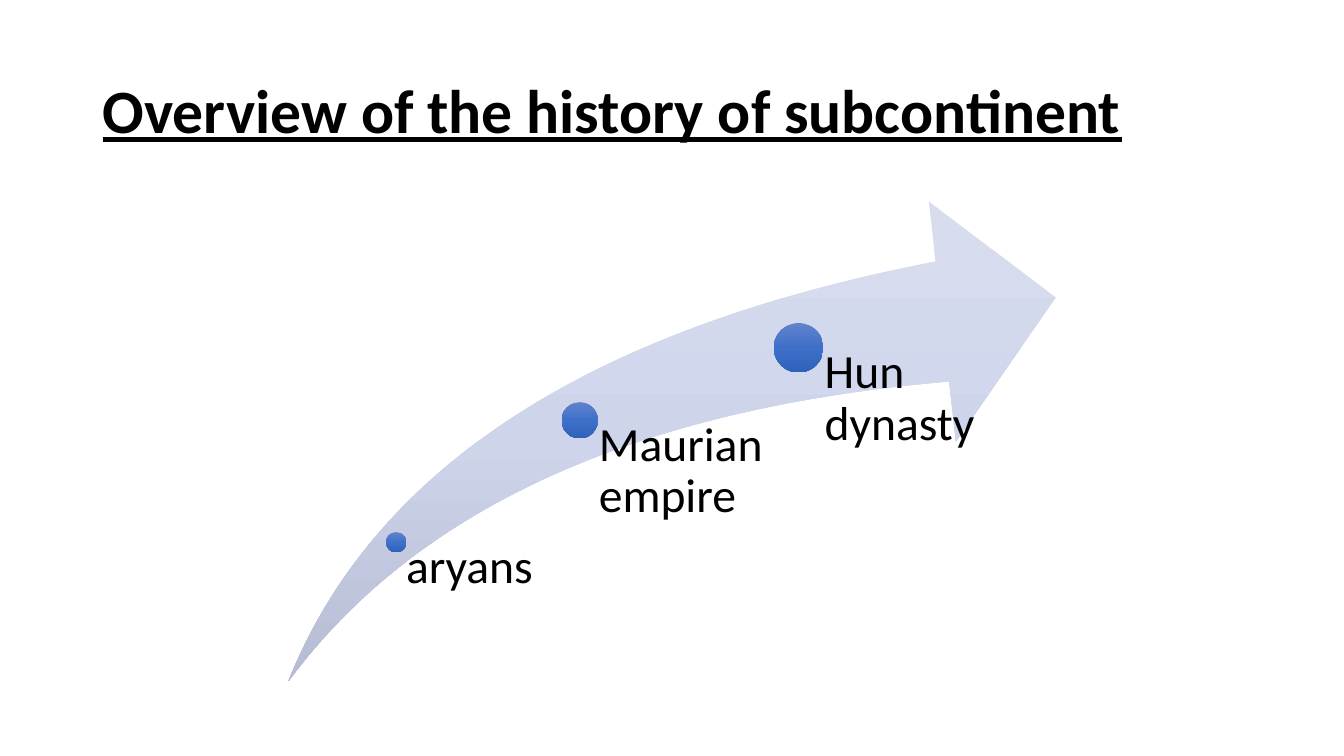
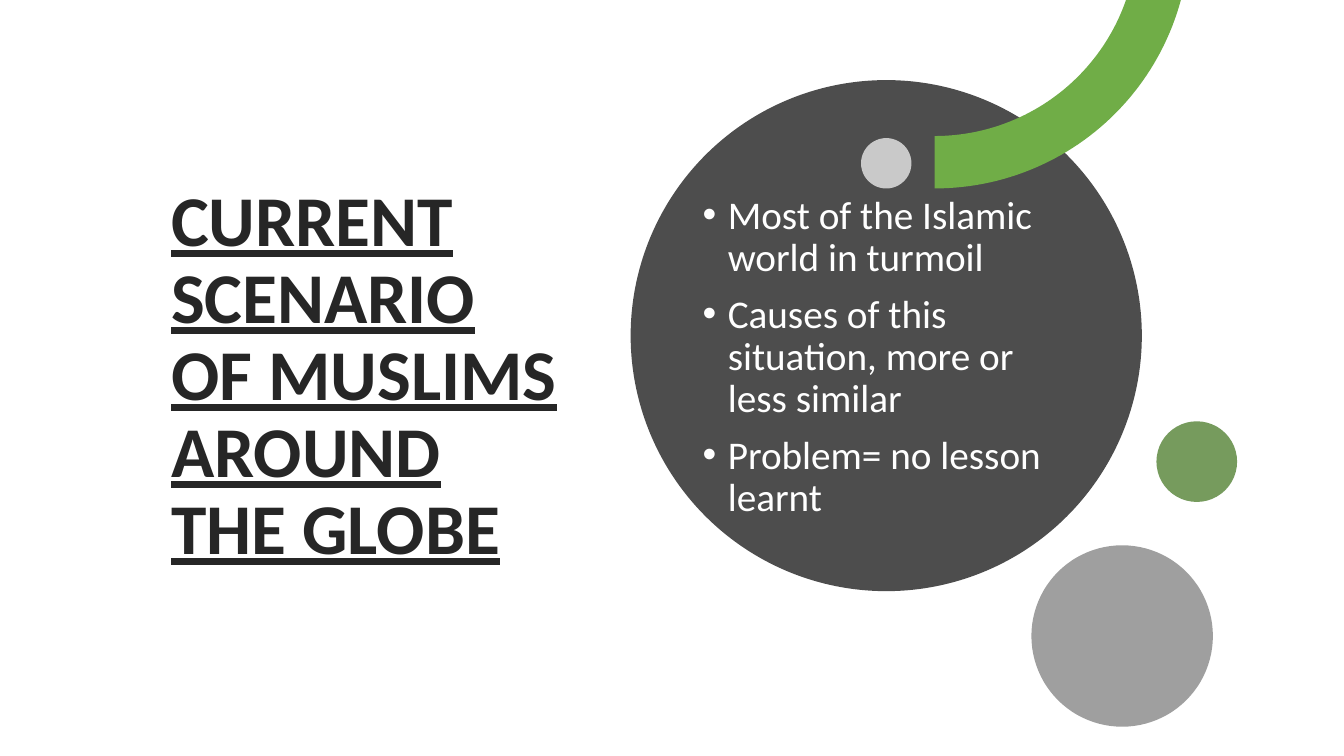
from math import asin, cos, pi, sin

from lxml.etree import SubElement
from pptx import Presentation
from pptx.dml.color import RGBColor
from pptx.enum.shapes import MSO_SHAPE
from pptx.enum.text import MSO_ANCHOR, PP_ALIGN
from pptx.oxml.ns import qn
from pptx.util import Inches, Pt

FONT = "Calibri"
COLORS = {
    "black": "000000",
    "title": "262626",
    "white": "FFFFFF",
    "disc": "4D4D4D",
    "gray": "404040",
    "green": "70AD47",
    "dark green": "548235",
}
SWOOSH_GRADIENT = ("D8DDEE", "CED5EB", "B5BCD3")
DOT_GRADIENT = ("6183CB", "3E70CA", "3062BB")


def add_plain_shape(slide, kind, left, top, width, height):
    shape = slide.shapes.add_shape(
        kind, Inches(left), Inches(top), Inches(width), Inches(height))
    shape.shadow.inherit = False
    shape.line.fill.background()
    return shape


def fill_solid(shape, color, opacity=100):
    shape.fill.solid()
    shape.fill.fore_color.rgb = RGBColor.from_string(COLORS[color])
    if opacity < 100:
        color_element = shape.element.spPr.find(qn("a:solidFill"))[0]
        SubElement(color_element, qn("a:alpha"), val=str(opacity * 1000))


def fill_gradient(shape, colors):
    """Fill from top to bottom with evenly spaced colours."""
    shape.fill.gradient()
    shape.fill.gradient_angle = 270
    stops = shape.element.spPr.find(qn("a:gradFill")).find(qn("a:gsLst"))
    for stop in list(stops):
        stops.remove(stop)
    for index, color in enumerate(colors):
        position = 100000 * index // (len(colors) - 1)
        stop = SubElement(stops, qn("a:gs"), pos=str(position))
        SubElement(stop, qn("a:srgbClr"), val=color)


def add_circle(slide, center_x, center_y, diameter):
    return add_plain_shape(slide, MSO_SHAPE.OVAL, center_x - diameter / 2,
                           center_y - diameter / 2, diameter, diameter)


def add_text(slide, box, lines, size, color, anchor=MSO_ANCHOR.MIDDLE, emphasis=False):
    """Add a text box; emphasis makes the text bold and underlined."""
    text_box = slide.shapes.add_textbox(*map(Inches, box))
    text_frame = text_box.text_frame
    text_frame.word_wrap = True
    text_frame.vertical_anchor = anchor
    text_frame.text = "\n".join(lines)
    for paragraph in text_frame.paragraphs:
        paragraph.alignment = PP_ALIGN.LEFT
        paragraph.line_spacing = 0.9
        font = paragraph.runs[0].font
        font.name = FONT
        font.size = Pt(size)
        font.color.rgb = RGBColor.from_string(COLORS[color])
        if emphasis:
            font.bold = True
            font.underline = True
    return text_frame


def add_title(slide, box, text, size, color):
    add_text(slide, box, [text], size, color, emphasis=True)


def add_milestone(slide, center_x, center_y, diameter, label, width, inset):
    """Add a dot with its label hanging from the dot's centre."""
    fill_gradient(add_circle(slide, center_x, center_y, diameter), DOT_GRADIENT)
    box = (center_x, center_y, width, 6.76 - center_y)
    text_frame = add_text(slide, box, [label], 34, "black", MSO_ANCHOR.TOP)
    text_frame.margin_left = Inches(inset)
    text_frame.margin_top = text_frame.margin_right = text_frame.margin_bottom = 0


def add_bullets(slide, box, lines, size, color):
    text_frame = add_text(slide, box, lines, size, color)
    for paragraph in text_frame.paragraphs:
        paragraph.space_before = Pt(10)
        properties = paragraph._p.get_or_add_pPr()
        properties.set("marL", str(Inches(0.25)))
        properties.set("indent", str(Inches(-0.25)))
        SubElement(properties, qn("a:buFont"), typeface="Arial")
        SubElement(properties, qn("a:buChar"), char="•")


def arc_points(center_x, center_y, radius, steps=48):
    """Points from the top edge of the slide to the bottom of a circle."""
    start = asin(-center_y / radius)
    angles = [start + (pi / 2 - start) * step / steps for step in range(steps + 1)]
    return [(Inches(center_x + radius * cos(angle)),
             Inches(center_y + radius * sin(angle))) for angle in angles]


def add_ring_segment(slide, center_x, center_y, outer_radius, inner_radius, color):
    points = arc_points(center_x, center_y, outer_radius)
    points += reversed(arc_points(center_x, center_y, inner_radius))
    builder = slide.shapes.build_freeform(*points[0])
    builder.add_line_segments(points[1:], close=True)
    segment = builder.convert_to_shape()
    segment.shadow.inherit = False
    segment.line.fill.background()
    fill_solid(segment, color)


def build_history_slide(slide):
    add_title(slide, (0.92, 0.4, 11.5, 1.45),
              "Overview of the history of subcontinent", 44, "black")
    swoosh = add_plain_shape(slide, MSO_SHAPE.SWOOSH_ARROW, 2.86, 2, 7.61, 4.76)
    swoosh.adjustments[0] = 0.25
    swoosh.adjustments[1] = 0.25
    fill_gradient(swoosh, SWOOSH_GRADIENT)
    for milestone in (
        (3.93, 5.38, 0.2, "aryans", 1.77, 0.1),
        (5.75, 4.17, 0.36, "Maurian empire", 1.83, 0.19),
        (7.92, 3.45, 0.49, "Hun dynasty", 1.83, 0.26),
    ):
        add_milestone(slide, *milestone)


def build_scenario_slide(slide):
    add_title(slide, (1.6, 1.19, 4.16, 5.11),
              "CURRENT SCENARIO OF MUSLIMS AROUND THE GLOBE", 51, "title")
    fill_solid(add_circle(slide, 8.79, 3.33, 5.07), "disc")
    fill_solid(add_circle(slide, 8.79, 1.62, 0.5), "white", 70)
    add_ring_segment(slide, 9.27, -0.66, 2.53, 2.01, "green")
    fill_solid(add_circle(slide, 11.87, 4.58, 0.8), "dark green", 80)
    fill_solid(add_circle(slide, 11.13, 6.31, 1.8), "gray", 50)
    add_bullets(slide, (6.87, 1.93, 3.92, 3.24), [
        "Most of the Islamic world in turmoil",
        "Causes of this situation, more or less similar",
        "Problem= no lesson learnt",
    ], 28, "white")


def main():
    presentation = Presentation()
    presentation.slide_width = Inches(13.33)
    presentation.slide_height = Inches(7.5)
    blank_layout = presentation.slide_layouts[6]
    for build_slide in (build_history_slide, build_scenario_slide):
        build_slide(presentation.slides.add_slide(blank_layout))
    presentation.save("out.pptx")


if __name__ == "__main__":
    main()
